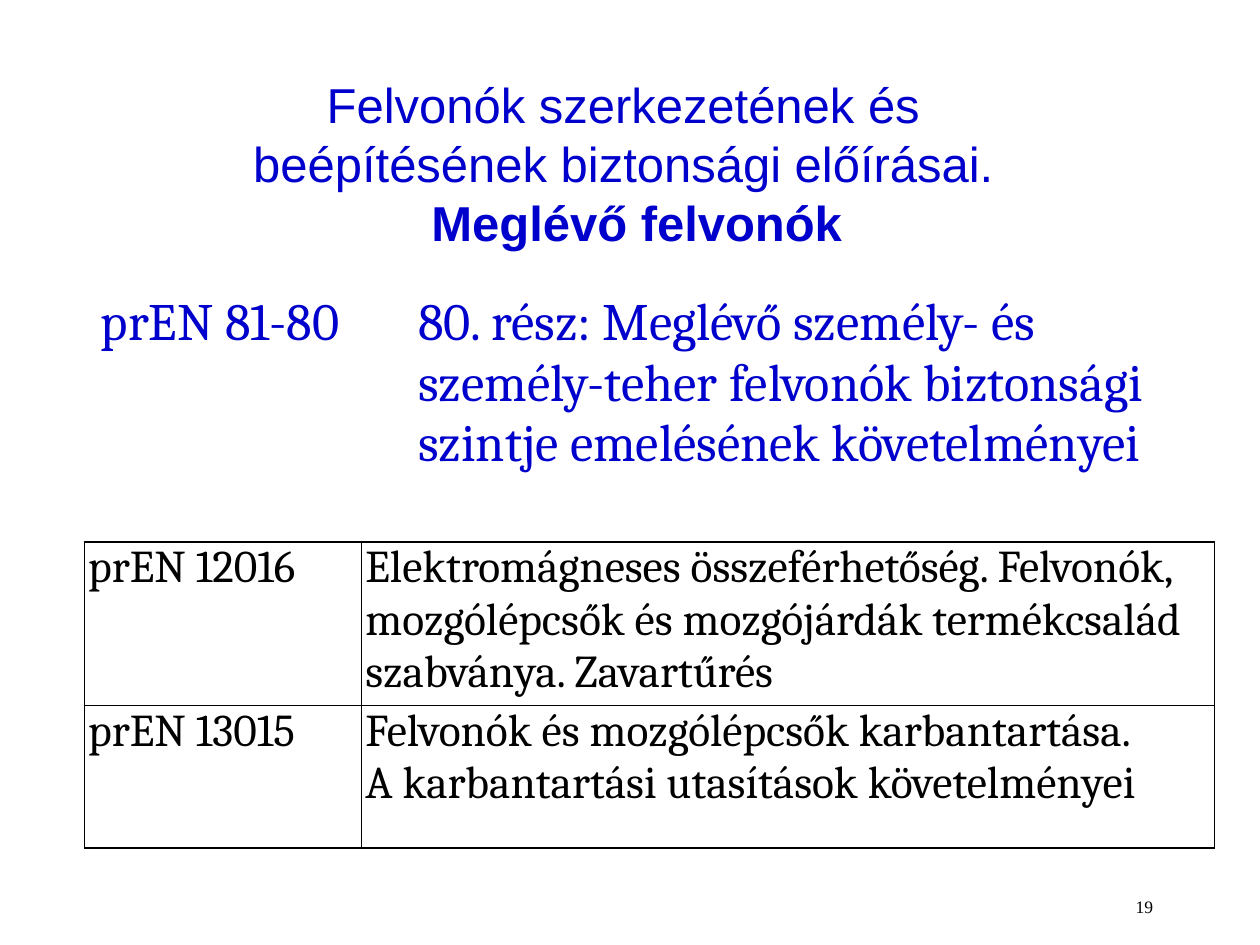
"""Build a slide on draft lift standards with a title and two tables."""
import pptx
import pptx.dml.color
import pptx.enum.text
import pptx.oxml
import pptx.oxml.ns
import pptx.util

Inches = pptx.util.Inches
Pt = pptx.util.Pt
ALIGN = pptx.enum.text.PP_ALIGN


def color(value):
    return pptx.dml.color.RGBColor.from_string(value)


def write(paragraph, text, text_format):
    for index, line in enumerate(text.split("\n")):
        if index:
            paragraph.add_line_break()
        run = paragraph.add_run()
        run.text = line
        for name, value in text_format.items():
            if name == "color":
                run.font.color.rgb = color(value)
            else:
                setattr(run.font, name, value)


presentation = pptx.Presentation()
presentation.slide_width = Inches(10)
presentation.slide_height = Inches(7.5)
slide = presentation.slides.add_slide(presentation.slide_layouts[6])

title_format = {"name": "Arial", "size": Pt(28), "color": "0000CC"}
number_format = {"name": "Times New Roman", "size": Pt(10), "color": "000000"}
text_boxes = [
    {
        "at": (0.75, 0.67, 8.5, 1.25),
        "anchor": pptx.enum.text.MSO_ANCHOR.MIDDLE,
        "align": ALIGN.CENTER,
        "runs": [
            ("Felvonók szerkezetének és \nbeépítésének biztonsági előírásai. \n", title_format),
            (" Meglévő felvonók", {**title_format, "bold": True}),
        ],
    },
    {
        "at": (7.17, 7.06, 2.08, 0.28),
        "anchor": pptx.enum.text.MSO_ANCHOR.TOP,
        "align": ALIGN.RIGHT,
        "runs": [("19", number_format)],
    },
]
for box in text_boxes:
    shape = slide.shapes.add_textbox(*map(Inches, box["at"]))
    shape.text_frame.word_wrap = True
    shape.text_frame.vertical_anchor = box["anchor"]
    paragraph = shape.text_frame.paragraphs[0]
    paragraph.alignment = box["align"]
    for text, text_format in box["runs"]:
        write(paragraph, text, text_format)

tables = [
    {
        "position": (0.75, 2.33),
        "columns": [2.52, 6.38],
        "rows": [1.5],
        "margin": 0.05,
        "bordered": False,
        "format": {"name": "Cambria", "size": Pt(30), "color": "0000CC"},
        "cells": [
            [
                "prEN 81-80",
                "80. rész: Meglévő személy- és személy-teher felvonók biztonsági "
                "szintje emelésének követelményei",
            ],
        ],
    },
    {
        "position": (0.67, 4.3),
        "columns": [2.2, 6.77],
        "rows": [1.23, 1.13],
        "margin": 0.03,
        "bordered": True,
        "format": {"name": "Cambria", "size": Pt(26), "color": "000000"},
        "cells": [
            [
                "prEN 12016",
                "Elektromágneses összeférhetőség. Felvonók, mozgólépcsők és "
                "mozgójárdák termékcsalád szabványa. Zavartűrés",
            ],
            [
                "prEN 13015",
                "Felvonók és mozgólépcsők karbantartása. \n"
                "A karbantartási utasítások követelményei",
            ],
        ],
    },
]
for data in tables:
    size = (sum(data["columns"]), sum(data["rows"]))
    table = slide.shapes.add_table(
        len(data["rows"]), len(data["columns"]), *map(Inches, data["position"] + size)
    ).table
    table.first_row = False
    table.horz_banding = False
    for column, width in zip(table.columns, data["columns"]):
        column.width = Inches(width)
    for row, height, texts in zip(table.rows, data["rows"], data["cells"]):
        row.height = Inches(height)
        for cell, text in zip(row.cells, texts):
            cell.margin_left = cell.margin_right = Inches(data["margin"])
            cell.margin_top = cell.margin_bottom = 0
            if data["bordered"]:
                properties = cell._tc.get_or_add_tcPr()
                for side in ("lnL", "lnR", "lnT", "lnB"):
                    properties.append(pptx.oxml.parse_xml(
                        f'<a:{side} {pptx.oxml.ns.nsdecls("a")} w="{Pt(1)}">'
                        f'<a:solidFill><a:srgbClr val="000000"/></a:solidFill></a:{side}>'
                    ))
            cell.fill.background()
            paragraph = cell.text_frame.paragraphs[0]
            paragraph.space_after = Pt(6)
            write(paragraph, text, data["format"])

presentation.save("out.pptx")
